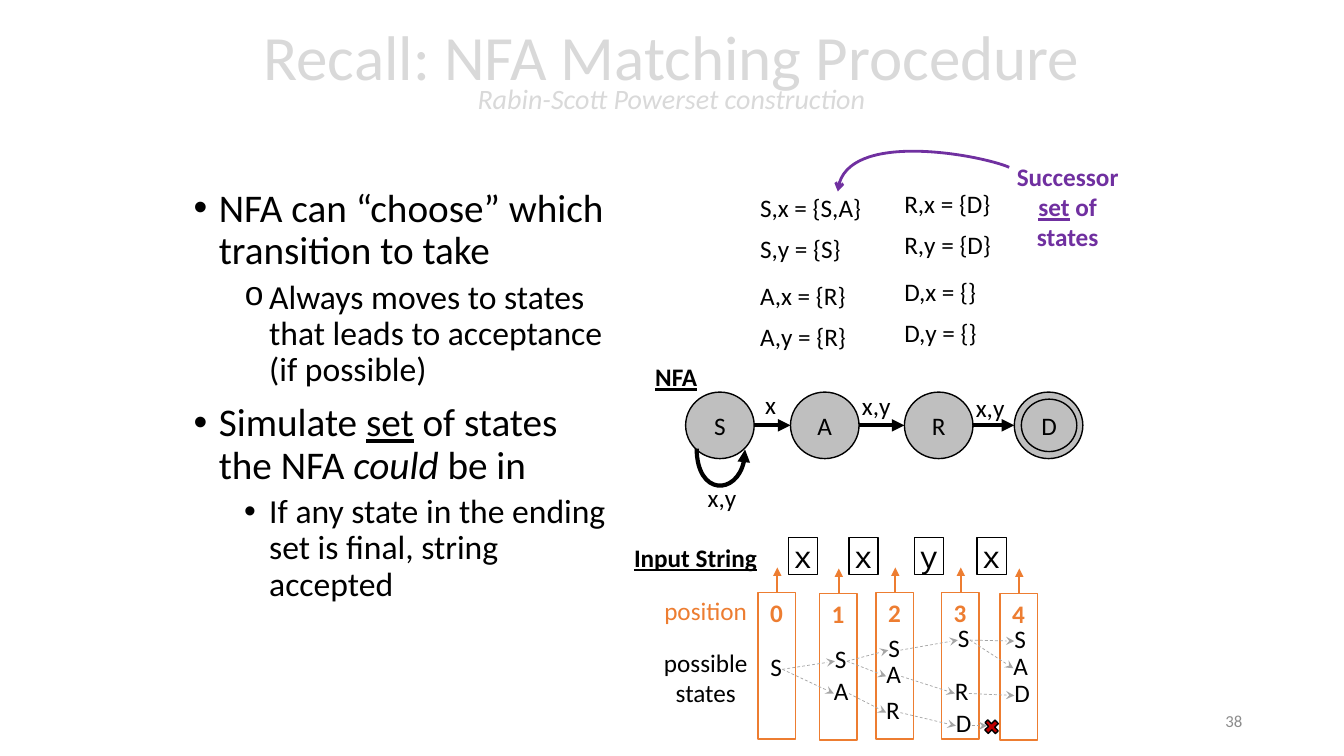
from lxml.etree import SubElement
from pptx import Presentation
from pptx.dml.color import RGBColor
from pptx.enum.dml import MSO_LINE
from pptx.enum.shapes import MSO_CONNECTOR, MSO_SHAPE
from pptx.enum.text import MSO_ANCHOR, MSO_AUTO_SIZE, PP_ALIGN
from pptx.oxml.ns import qn
from pptx.util import Inches, Pt

COLORS = {"ink": "000000", "title": "D9D9D9", "number": "8C8C8C", "accent": "ED7D31",
          "note": "7030A0", "state": "BFBFBF", "paper": "FFFFFF", "link": "A5A5A5",
          "dead": "C00000"}
STATE_WIDTHS = {"S": 0.12, "A": 0.15, "R": 0.14, "D": 0.16}


def color(name):
    return RGBColor.from_string(COLORS[name])


def write(para, text, size=18, ink="ink", font="Calibri", bold=False, italic=False,
          underline=False, align=None, spacing=None):
    """Add one formatted span to a paragraph."""
    span = para.add_run()
    span.text = text
    span.font.name, span.font.size = font, Pt(size)
    span.font.bold, span.font.italic, span.font.underline = bold, italic, underline
    span.font.color.rgb = color(ink)
    if align is not None:
        para.alignment = align
    if spacing is not None:
        para.line_spacing = spacing


def set_insets(frame, across, down):
    frame.margin_left = frame.margin_right = Inches(across)
    frame.margin_top = frame.margin_bottom = Inches(down)


def add_label(page, left, top, width, text, height=0.4, insets=(0.1, 0.05), **style):
    box = page.shapes.add_textbox(Inches(left), Inches(top), Inches(width), Inches(height))
    frame = box.text_frame
    frame.word_wrap = False
    set_insets(frame, *insets)
    write(frame.paragraphs[0], text, **style)
    return frame


def add_figure(page, kind, left, top, width, height, fill="paper", line="ink"):
    figure = page.shapes.add_shape(kind, Inches(left), Inches(top), Inches(width), Inches(height))
    figure.shadow.inherit = False
    figure.fill.solid()
    figure.fill.fore_color.rgb = color(fill)
    figure.line.color.rgb = color(line)
    figure.line.width = Pt(1)
    return figure


def add_head(line, head):
    SubElement(line.line._get_or_add_ln(), qn("a:tailEnd"), type=head)


def add_arrow(page, start, end, ink="ink", width=3, head="triangle", dash=None):
    arrow = page.shapes.add_connector(MSO_CONNECTOR.STRAIGHT, *map(Inches, (*start, *end)))
    arrow.line.color.rgb = color(ink)
    arrow.line.width = Pt(width)
    if dash:
        arrow.line.dash_style = dash
    add_head(arrow, head)
    SubElement(arrow._element.spPr, qn("a:effectLst"))


def add_curve(page, start, controls, end, peak, ink, width, head):
    """Draw a cubic curve; peak is its outermost point and sets the frame."""
    builder = page.shapes.build_freeform(*map(Inches, start), scale=1.0)
    builder.add_line_segments([tuple(map(Inches, point)) for point in (peak, end)], close=False)
    curve = builder.convert_to_shape()
    curve.shadow.inherit = False
    curve.fill.background()
    curve.line.color.rgb = color(ink)
    curve.line.width = Pt(width)
    add_head(curve, head)
    route = curve._element.spPr.find(".//" + qn("a:path"))
    for segment in route.findall(qn("a:lnTo")):
        route.remove(segment)
    bezier = SubElement(route, qn("a:cubicBezTo"))
    for x, y in (*controls, end):
        SubElement(bezier, qn("a:pt"), x=str(Inches(x) - curve.left), y=str(Inches(y) - curve.top))


def place(holder, left, top, width, height, anchor):
    holder.left, holder.top = Inches(left), Inches(top)
    holder.width, holder.height = Inches(width), Inches(height)
    frame = holder.text_frame
    frame.auto_size, frame.word_wrap = MSO_AUTO_SIZE.NONE, True
    frame.vertical_anchor = anchor
    set_insets(frame, 0.1, 0.05)
    return frame


def fill_title(page, *box):
    para = place(page.shapes.title, *box, MSO_ANCHOR.MIDDLE).paragraphs[0]
    write(para, "Recall: NFA Matching Procedure", size=45, ink="title",
          align=PP_ALIGN.CENTER, spacing=0.7)
    para.add_line_break()
    write(para, "Rabin-Scott Powerset construction", size=20, ink="title", italic=True)


def fill_points(page, *box):
    frame = place(page.placeholders[1], *box, MSO_ANCHOR.TOP)
    points = [
        (0, "•", [("NFA can “choose” which transition to take", {})]),
        (1, "o", [("Always moves to states that leads to acceptance (if possible)", {})]),
        (0, "•", [("Simulate ", {}), ("set", {"underline": True}), (" of states the NFA ", {}),
                  ("could", {"italic": True}), (" be in", {})]),
        (1, "•", [("If any state in the ending set is final, string accepted", {})])]
    for index, (level, bullet, spans) in enumerate(points):
        para = frame.add_paragraph() if index else frame.paragraphs[0]
        para.level = level
        para.space_before = Pt(5 if level else 10)
        for text, style in spans:
            write(para, text, size=24 if level else 28, spacing=0.9, **style)
        props = para._p.get_or_add_pPr()
        props.set("marL", str(Inches(0.75 if level else 0.25)))
        props.set("indent", str(Inches(-0.25)))
        SubElement(props, qn("a:buFont"), typeface="Courier New" if bullet == "o" else "Arial")
        SubElement(props, qn("a:buChar"), char=bullet)


def add_transitions(page, left, top):
    # Two columns of successor sets
    columns = [(0, 0.36, ["S,x = {S,A}", "S,y = {S}", "A,x = {R}", "A,y = {R}"]),
               (1.43, 0.32, ["R,x = {D}", "R,y = {D}", "D,x = {}", "D,y = {}"])]
    for x, y, rules in columns:
        for rule, drop in zip(rules, (0, 0.41, 0.87, 1.28)):
            add_label(page, left + x, top + y + drop, 1.25, rule)

    # Purple note and its arrow
    style = {"ink": "note", "bold": True, "align": PP_ALIGN.CENTER}
    frame = add_label(page, left + 2.52, top + 0.05, 1.26, "Successor", height=1.01, **style)
    para = frame.add_paragraph()
    write(para, "set", underline=True, **style)
    write(para, " of", **style)
    write(frame.add_paragraph(), "states", **style)
    add_curve(page, (left + 2.57, top + 0.16), [(left + 2.29, top + 0.04), (left + 0.91, top - 0.22)],
              (left + 0.87, top + 0.4), (left + 1.6, top), "note", 2, "arrow")


def add_automaton(page, left, top):
    add_label(page, left, top, 0.62, "NFA", bold=True, underline=True)
    width, height, middle = 0.68, 0.66, top + 0.68
    state_lefts = [left + x for x in (0.4, 1.44, 2.57, 3.66)]
    for name, x in zip("SARD", state_lefts):
        state = add_figure(page, MSO_SHAPE.OVAL, x, middle - height / 2, width, height, "state")
        if name == "D":  # inner ring of the final state
            state = add_figure(page, MSO_SHAPE.OVAL, x + 0.07, middle - 0.26, 0.55, 0.52, "state")
        frame = state.text_frame
        frame.word_wrap = False
        frame.vertical_anchor = MSO_ANCHOR.MIDDLE
        write(frame.paragraphs[0], name, align=PP_ALIGN.CENTER)
    for start, end in zip(state_lefts, state_lefts[1:]):
        add_arrow(page, (start + width, middle), (end, middle))
    for text, x, y in [("x", 1.09, 0.27), ("x,y", 2.05, 0.28), ("x,y", 3.18, 0.3), ("x,y", 0.52, 1.2)]:
        add_label(page, left + x, top + y, 0.31 if text == "x" else 0.49, text)

    # Loop on S
    add_curve(page, (left + 0.51, top + 0.91), [(left + 0.51, top + 1.38), (left + 0.99, top + 1.38)],
              (left + 0.99, top + 0.92), (left + 0.75, top + 1.26), "ink", 3, "triangle")


def add_trace(page, left, top):
    # Input letters
    add_label(page, left, top, 1.43, "Input String", bold=True, underline=True)
    for letter, x in zip("xxyx", (1.63, 2.23, 2.88, 3.5)):
        tile = add_figure(page, MSO_SHAPE.RECTANGLE, left + x, top, 0.29, 0.37)
        tile.text_frame.word_wrap = False
        set_insets(tile.text_frame, 0.05, 0)
        write(tile.text_frame.paragraphs[0], letter, size=22, font="Courier New", align=PP_ALIGN.LEFT)

    # Position columns
    add_label(page, left + 0.3, top + 0.53, 1.03, "position", ink="accent")
    for position, x in enumerate((1.33, 1.94, 2.5, 3.15, 3.73)):
        x, y = left + x, top + (0.56 if position in (1, 4) else 0.55)
        add_figure(page, MSO_SHAPE.RECTANGLE, x, y, 0.37, 1.45, line="accent")
        add_label(page, x + 0.02, y, 0.33, str(position), ink="accent", bold=True)
        add_arrow(page, (x + 0.19, y), (x + 0.19, y - 0.25), "accent", 1.5)

    # Possible states at each position
    frame = add_label(page, left + 0.29, top + 1.04, 1.04, "possible", height=0.71,
                      align=PP_ALIGN.CENTER)
    write(frame.add_paragraph(), "states", align=PP_ALIGN.CENTER)
    states = {"S0": (1.45, 1.18), "S1": (2.09, 1.1), "A1": (2.08, 1.42), "S2": (2.62, 0.99),
              "A2": (2.6, 1.25), "R2": (2.6, 1.61), "S3": (3.31, 0.89), "R3": (3.28, 1.42),
              "D3": (3.29, 1.74), "S4": (3.87, 0.9), "A4": (3.86, 1.17), "D4": (3.87, 1.44)}
    for key, (x, y) in states.items():
        add_label(page, left + x, top + y, STATE_WIDTHS[key[0]], key[0], height=0.26,
                  insets=(0, 0), spacing=Pt(18))

    # Links between states, ending in a dead end
    states["dead"] = (3.6, 1.74)
    links = ["S0 S1", "S0 A1", "S1 S2", "S1 A2", "A1 R2", "S2 S3", "A2 R3", "R2 D3",
             "S3 S4", "S3 A4", "R3 D4", "D3 dead"]
    for source, target in map(str.split, links):
        (x1, y1), (x2, y2) = states[source], states[target]
        add_arrow(page, (left + x1 + STATE_WIDTHS[source[0]], top + y1 + 0.13),
                  (left + x2, top + y2 + 0.13), "link", 0.5, "stealth", MSO_LINE.DASH)
    cross = add_figure(page, MSO_SHAPE.CROSS, left + 3.57, top + 1.81, 0.15, 0.14, "dead")
    cross.adjustments[0] = 0.365
    cross.rotation = 46.6


def main():
    deck = Presentation()
    deck.slide_width, deck.slide_height = Inches(13.33), Inches(7.5)
    page = deck.slides.add_slide(deck.slide_layouts[1])
    fill_title(page, 2.35, 0.03, 8.62, 1.45)
    fill_points(page, 1.82, 1.82, 4.35, 4.76)
    add_transitions(page, 7.44, 1.5)
    add_automaton(page, 6.4, 3.54)
    add_trace(page, 6.19, 5.33)
    number = add_label(page, 9.42, 6.95, 3, "38", size=12, ink="number", align=PP_ALIGN.RIGHT)
    number.word_wrap, number.vertical_anchor = True, MSO_ANCHOR.MIDDLE
    deck.save("out.pptx")


if __name__ == "__main__":
    main()
